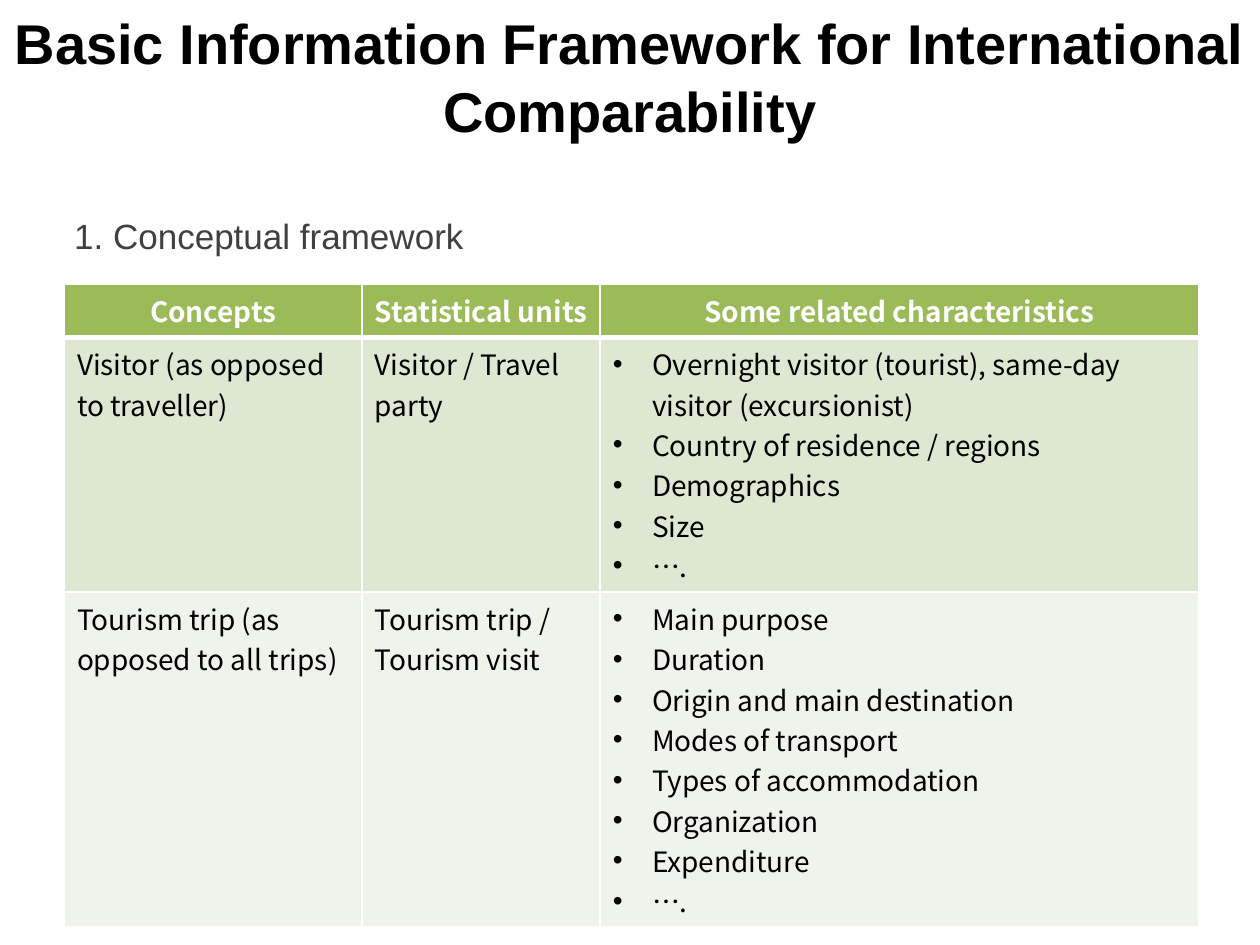
from dataclasses import dataclass

from lxml import etree
from pptx import Presentation
from pptx.dml.color import RGBColor
from pptx.enum.text import MSO_ANCHOR, MSO_AUTO_SIZE, PP_ALIGN
from pptx.oxml.ns import qn
from pptx.util import Cm, Pt

CENTER, LEFT = PP_ALIGN.CENTER, PP_ALIGN.LEFT
MIDDLE, TOP = MSO_ANCHOR.MIDDLE, MSO_ANCHOR.TOP
NO_AUTOFIT = MSO_AUTO_SIZE.NONE

TITLE = "Basic Information Framework for International Comparability"
SECTION = "1. Conceptual framework"
HEADINGS = ["Concepts", "Statistical units", "Some related characteristics"]
FRAMEWORK = [
    (
        ["Visitor (as opposed", "to traveller)"],
        ["Visitor / Travel", "party"],
        [
            "Overnight visitor (tourist), same-day visitor (excursionist)",
            "Country of residence / regions",
            "Demographics",
            "Size",
            "….",
        ],
    ),
    (
        ["Tourism trip (as", "opposed to all trips)"],
        ["Tourism trip /", "Tourism visit"],
        [
            "Main purpose",
            "Duration",
            "Origin and main destination",
            "Modes of transport",
            "Types of accommodation",
            "Organization",
            "Expenditure",
            "….",
        ],
    ),
]
CHARACTERISTICS = 2  # the bulleted column
COLUMN_WIDTHS = [Cm(6), Cm(4.8), Cm(12.06)]
ROW_HEIGHTS = [Cm(1.04), Cm(5.1), Cm(6.7)]
BULLET_INDENT = Cm(0.79)


@dataclass(frozen=True)
class Theme:
    heading_font: str = "Arial"
    table_font: str = "Noto Sans CJK KR"
    title_size: int = 32
    section_size: int = 20
    table_size: int = 16
    ink: str = "000000"
    section_ink: str = "404040"
    white: str = "FFFFFF"
    header_fill: str = "9BBB59"
    band_fills: tuple = ("DEE7D1", "EFF3EA")
    rule: int = 1
    header_rule: int = 3


THEME = Theme()


def set_font(paragraph, name, size, color, bold=False):
    font = paragraph.font
    font.name, font.size, font.bold = name, Pt(size), bold
    font.color.rgb = RGBColor.from_string(color)


def set_bullet(paragraph, char=None, indent=0):
    """Give the paragraph a hanging bullet, or none when char is missing."""
    properties = paragraph._p.get_or_add_pPr()
    properties.set("marL", str(indent))
    properties.set("indent", str(-indent))
    if char:
        font = etree.SubElement(properties, qn("a:buFont"))
        font.set("typeface", THEME.heading_font)
        etree.SubElement(properties, qn("a:buChar")).set("char", char)
    else:
        etree.SubElement(properties, qn("a:buNone"))


def fill_placeholder(placeholder, box, text, size, color, align, bold=False):
    placeholder.left, placeholder.top, placeholder.width, placeholder.height = box
    frame = placeholder.text_frame
    frame.text = text
    frame.word_wrap = True
    frame.auto_size = NO_AUTOFIT
    frame.vertical_anchor = MIDDLE
    paragraph = frame.paragraphs[0]
    paragraph.alignment = align
    paragraph.space_before = Pt(0)
    set_bullet(paragraph)
    set_font(paragraph, THEME.heading_font, size, color, bold)


def set_borders(cell, bottom):
    properties = cell._tc.get_or_add_tcPr()
    widths = {"L": THEME.rule, "R": THEME.rule, "T": THEME.rule, "B": bottom}
    for side, width in widths.items():
        line = etree.SubElement(properties, qn(f"a:ln{side}"), w=str(Pt(width)))
        solid = etree.SubElement(line, qn("a:solidFill"))
        etree.SubElement(solid, qn("a:srgbClr")).set("val", THEME.white)


def fill_cell(cell, lines, fill, header=False, bulleted=False):
    set_borders(cell, THEME.header_rule if header else THEME.rule)
    cell.fill.solid()
    cell.fill.fore_color.rgb = RGBColor.from_string(fill)
    cell.vertical_anchor = MIDDLE if header else TOP
    cell.text_frame.text = "\n".join(lines)
    for paragraph in cell.text_frame.paragraphs:
        paragraph.alignment = CENTER if header else LEFT
        if bulleted:
            set_bullet(paragraph, "•", BULLET_INDENT)
        color = THEME.white if header else THEME.ink
        set_font(paragraph, THEME.table_font, THEME.table_size, color, header)


def add_framework_table(slide):
    table = slide.shapes.add_table(
        len(ROW_HEIGHTS), len(COLUMN_WIDTHS),
        Cm(1.3), Cm(5.73), sum(COLUMN_WIDTHS), sum(ROW_HEIGHTS),
    ).table
    for column, width in zip(table.columns, COLUMN_WIDTHS):
        column.width = width
    for row, height in zip(table.rows, ROW_HEIGHTS):
        row.height = height
    for col, heading in enumerate(HEADINGS):
        fill_cell(table.cell(0, col), [heading], THEME.header_fill, header=True)
    for row, (entry, fill) in enumerate(zip(FRAMEWORK, THEME.band_fills), start=1):
        for col, lines in enumerate(entry):
            fill_cell(table.cell(row, col), lines, fill,
                      bulleted=col == CHARACTERISTICS)


def main():
    deck = Presentation()
    deck.slide_width, deck.slide_height = Cm(25.4), Cm(19.05)
    slide = deck.slides.add_slide(deck.slide_layouts.get_by_name("Title and Content"))
    title, section = slide.placeholders
    fill_placeholder(title, (Cm(0), Cm(0.05), deck.slide_width, Cm(2.97)),
                     TITLE, THEME.title_size, THEME.ink, CENTER, bold=True)
    fill_placeholder(section, (Cm(1.24), Cm(4.11), Cm(22.86), Cm(1.27)),
                     SECTION, THEME.section_size, THEME.section_ink, LEFT)
    add_framework_table(slide)
    deck.save("out.pptx")


if __name__ == "__main__":
    main()
